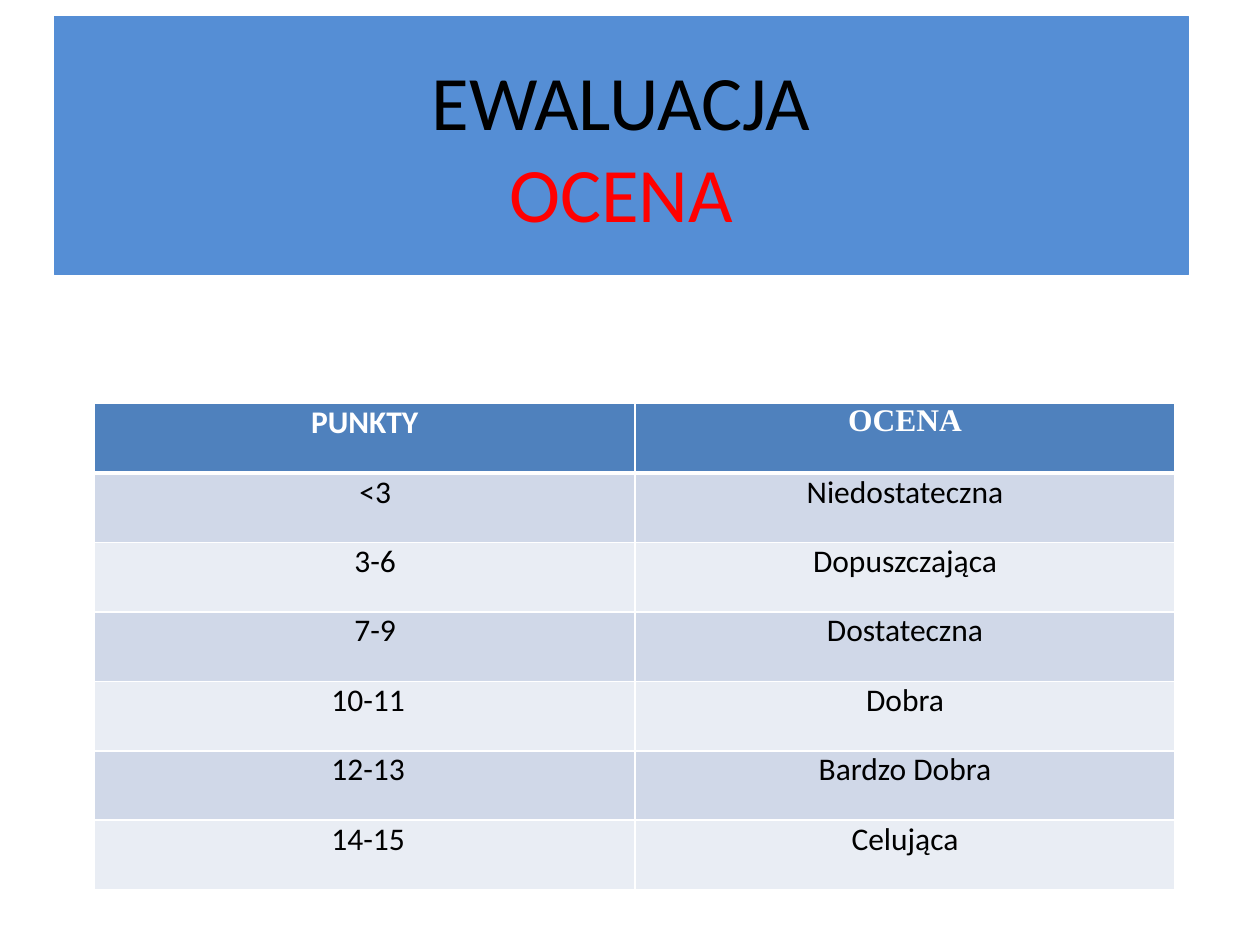
from dataclasses import dataclass
from lxml import etree
from pptx import Presentation
from pptx.dml.color import RGBColor
from pptx.enum.text import MSO_ANCHOR, MSO_AUTO_SIZE, PP_ALIGN
from pptx.oxml.ns import qn
from pptx.util import Pt

CENTER = PP_ALIGN.CENTER
MIDDLE = MSO_ANCHOR.MIDDLE
TOP = MSO_ANCHOR.TOP
FIXED = MSO_AUTO_SIZE.NONE


@dataclass(frozen=True)
class Theme:
    banner: str = "558ED5"
    head: str = "4F81BD"
    bands: tuple = ("D0D8E8", "E9EDF4")
    white: str = "FFFFFF"
    black: str = "000000"
    red: str = "FF0000"
    sans: str = "Calibri"
    serif: str = "Times New Roman"
    title: int = 44
    body: int = 18


theme = Theme()


def add_run(para, text, size, color, font=theme.sans, bold=False):
    run = para.add_run()
    run.text = text
    run.font.size = Pt(size)
    run.font.name = font
    run.font.bold = bold
    run.font.color.rgb = RGBColor.from_string(color)


def add_edge(cell, side, width):
    line = etree.SubElement(cell._tc.get_or_add_tcPr(), qn("a:" + side), w=str(Pt(width)))
    fill = etree.SubElement(line, qn("a:solidFill"))
    etree.SubElement(fill, qn("a:srgbClr"), val=theme.white)


deck = Presentation()
deck.slide_width, deck.slide_height = Pt(720), Pt(540)
slide = deck.slides.add_slide(deck.slide_layouts[5])

title = slide.shapes.title
title.left, title.top, title.width, title.height = Pt(31), Pt(9.4), Pt(648), Pt(147.6)
title.fill.solid()
title.fill.fore_color.rgb = RGBColor.from_string(theme.banner)
title.line.color.rgb = RGBColor.from_string(theme.banner)
title.line.width = Pt(0.75)
frame = title.text_frame
frame.auto_size = FIXED
frame.word_wrap = True
frame.vertical_anchor = MIDDLE
para = frame.paragraphs[0]
para.alignment = CENTER
add_run(para, "EWALUACJA", theme.title, theme.black)
para.add_line_break()
add_run(para, "OCENA", theme.title, theme.red)

grades = [
    ("PUNKTY", "OCENA", 0),
    ("<3", "Niedostateczna", 12),
    ("3-6", "Dopuszczająca", 12),
    ("7-9", "Dostateczna", 12),
    ("10-11", "Dobra", 4),
    ("12-13", "Bardzo Dobra", 4),
    ("14-15", "Celująca", 4),
]
table = slide.shapes.add_table(len(grades), 2, Pt(54), Pt(230.6), Pt(617.6), Pt(277.9)).table
for col in table.columns:
    col.width = Pt(308.8)

for r, (points, grade, shift) in enumerate(grades):
    table.rows[r].height = Pt(39.7)
    is_head = r == 0
    for c, text in enumerate((points, grade)):
        cell = table.cell(r, c)
        cell.margin_left = Pt(5 + (shift if c == 0 else 0))
        cell.margin_right = Pt(5)
        cell.margin_top = cell.margin_bottom = Pt(0)
        cell.vertical_anchor = TOP
        for side in ("lnL", "lnR", "lnT", "lnB"):
            thick = (is_head and side == "lnB") or (r == 1 and side == "lnT")
            add_edge(cell, side, 3 if thick else 1)
        cell.fill.solid()
        fill = theme.head if is_head else theme.bands[(r - 1) % 2]
        cell.fill.fore_color.rgb = RGBColor.from_string(fill)
        para = cell.text_frame.paragraphs[0]
        para.alignment = CENTER
        color = theme.white if is_head else theme.black
        font = theme.serif if is_head and c == 1 else theme.sans
        add_run(para, text, theme.body, color, font, is_head)

deck.save("out.pptx")
